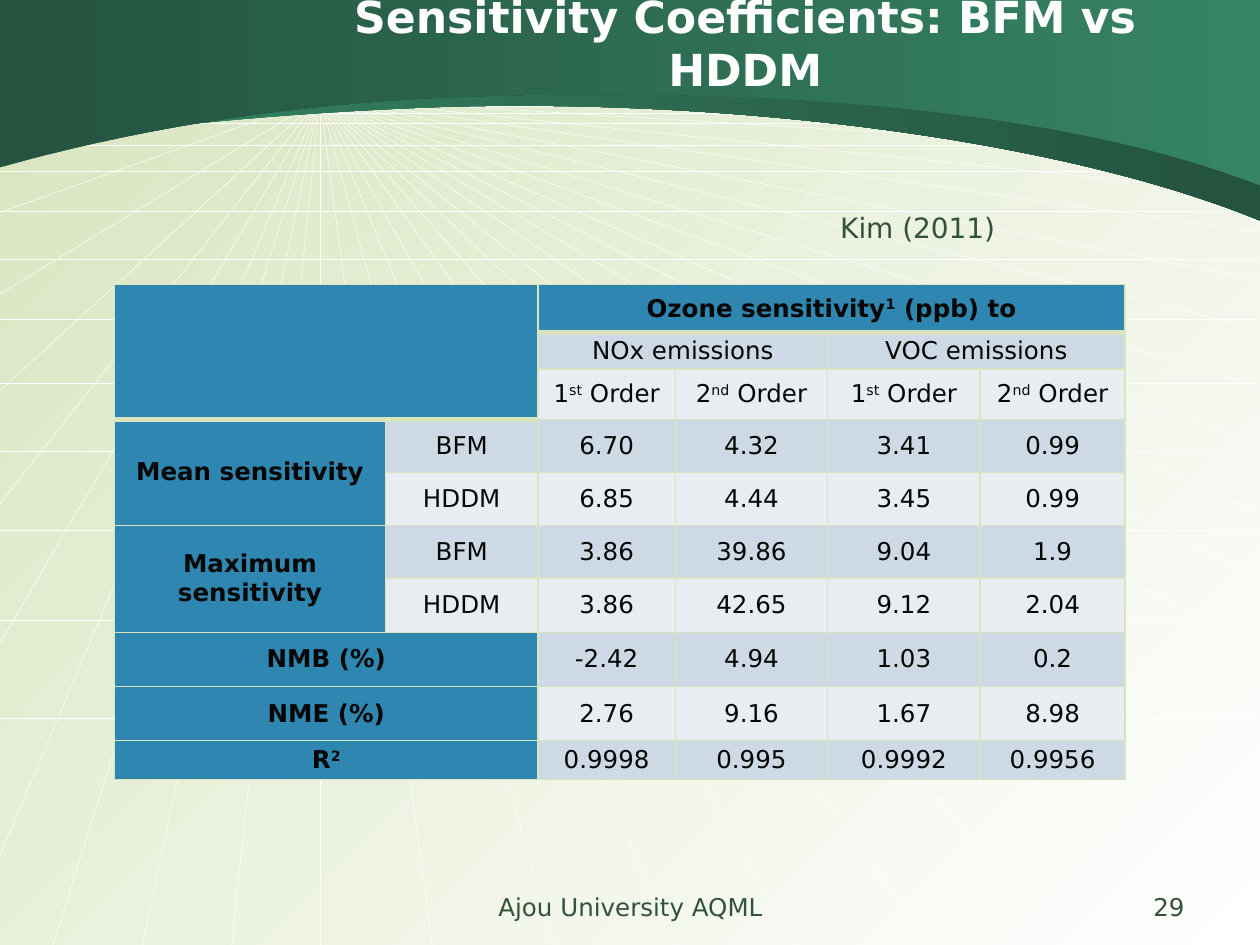
from dataclasses import dataclass

from lxml import etree
from pptx import Presentation
from pptx.dml.color import RGBColor
from pptx.enum.shapes import MSO_CONNECTOR
from pptx.enum.text import MSO_ANCHOR, MSO_AUTO_SIZE, PP_ALIGN
from pptx.oxml.ns import qn
from pptx.util import Inches, Pt

STRAIGHT = MSO_CONNECTOR.STRAIGHT
MIDDLE = MSO_ANCHOR.MIDDLE
LEFT, CENTER, RIGHT = PP_ALIGN.LEFT, PP_ALIGN.CENTER, PP_ALIGN.RIGHT
NO_AUTOFIT = MSO_AUTO_SIZE.NONE


@dataclass(frozen=True)
class Theme:
    font: str = "DejaVu Sans"
    white: str = "FFFFFF"
    pale_green: str = "D7E4BE"
    dark_green: str = "24533F"
    mid_green: str = "368463"
    text_green: str = "335338"
    table_text: str = "040705"
    header: str = "2F86B1"
    bands: tuple = ("E8EDF2", "CDD9E4")
    title_size: float = 25.2
    source_size: float = 16
    body_size: float = 14


theme = Theme()


def write(text_frame, text, size, color, bold=False, align=CENTER):
    """Fill a text frame; parts between ^ signs become superscript."""
    paragraph = text_frame.paragraphs[0]
    paragraph.alignment = align
    for index, part in enumerate(text.split("^")):
        if not part:
            continue
        run = paragraph.add_run()
        run.text = part
        run.font.name = theme.font
        run.font.size = Pt(size)
        run.font.bold = bold
        run.font.color.rgb = RGBColor.from_string(color)
        if index % 2:
            run.font._element.set("baseline", "30000")


def set_gradient(fill, colors, angle):
    fill.gradient()
    fill.gradient_angle = angle
    for stop, color, position in zip(fill.gradient_stops, colors, (0, 1)):
        stop.color.rgb = RGBColor.from_string(color)
        stop.position = position


presentation = Presentation()
presentation.slide_width = Inches(10)
presentation.slide_height = Inches(7.5)
slide = presentation.slides.add_slide(presentation.slide_layouts[5])
shapes = slide.shapes
set_gradient(slide.background.fill, (theme.pale_green, theme.white), 315)

# Perspective grid: rays from one vanishing point, then horizontal lines
vanishing_point = (2.54, 0.78)
left_edge, right_edge, bottom_edge = -0.01, 9.99, 7.5
right_ends = (1, 1.23, 1.54, 1.84, 2.22, 2.61, 3.07, 3.53, 4.06, 4.59, 5.2, 5.89, 6.8)
bottom_ends = (0.42, 1.13, 1.84, 2.54, 3.43, 4.39, 5.34, 6.3, 7.38, 8.46, 9.6)
left_ends = (0.78, 0.97, 1.16, 1.69, 2.34, 3.11, 4.01, 5.12, 6.81)
levels = (0.84, 0.9, 0.98, 1.15, 1.36, 1.68, 2.06, 2.53, 3.04, 3.58, 4.21, 4.92, 5.7)
grid_lines = [(vanishing_point, (right_edge, y)) for y in right_ends]
grid_lines += [(vanishing_point, (x, bottom_edge)) for x in bottom_ends]
grid_lines += [(vanishing_point, (left_edge, y)) for y in left_ends]
grid_lines += [((left_edge, y), (right_edge, y)) for y in levels]
grid = shapes.add_group_shape()
for start, end in grid_lines:
    line = grid.shapes.add_connector(STRAIGHT, *map(Inches, start + end))
    line.line.color.rgb = RGBColor.from_string(theme.white)
    line.line.width = Pt(0.25)
    etree.SubElement(line._element.spPr, qn("a:effectLst"))

# Header bands: the lower edge is two Bezier curves of three points each
header_bands = (
    ([(left_edge, 1.19), (0.11, 1.18), (1.33, 0.93), (3.47, 0.85),
      (5.61, 0.78), (8.31, 1.06), (10, 1.75)], (theme.mid_green, theme.dark_green)),
    ([(left_edge, 1.33), (0.11, 1.31), (1.51, 0.85), (3.64, 0.77),
      (5.77, 0.69), (8.31, 0.81), (10, 1.47)], (theme.dark_green, theme.mid_green)),
)
for edge, colors in header_bands:
    builder = shapes.build_freeform(Inches(left_edge), 0)
    builder.add_line_segments([(Inches(x), Inches(y)) for x, y in edge + [(10, 0)]])
    band = builder.convert_to_shape()
    segments = list(band._element.iter(qn("a:lnTo")))
    for first in (1, 4):
        curve = etree.Element(qn("a:cubicBezTo"))
        segments[first].addprevious(curve)
        for segment in segments[first:first + 3]:
            curve.append(segment[0])
            segment.getparent().remove(segment)
    band.shadow.inherit = False
    band.line.fill.background()
    set_gradient(band.fill, colors, 0)

title = shapes.title
shapes._spTree.append(title._element)  # bring the title in front of the bands
title.left, title.top, title.width, title.height = map(Inches, (2.04, 0.03, 7.75, 0.62))
title.text_frame.auto_size = NO_AUTOFIT
title.text_frame.word_wrap = True
title.text_frame.vertical_anchor = MIDDLE
write(title.text_frame, "Sensitivity Coefficients: BFM vs HDDM",
      theme.title_size, theme.white, bold=True)

labels = (
    ("Kim (2011)", (6.57, 1.62, 1.89, 0.37), theme.source_size, LEFT),
    ("Ajou University AQML", (3.42, 7.03, 3.17, 0.35), theme.body_size, CENTER),
    ("29", (7.17, 7.03, 2.33, 0.35), theme.body_size, RIGHT),
)
for text, box, size, align in labels:
    label = shapes.add_textbox(*map(Inches, box))
    label.text_frame.word_wrap = True
    write(label.text_frame, text, size, theme.text_green, align=align)

# Sensitivity table
table_rows = (
    ("", "", "Ozone sensitivity^1^ (ppb) to", "", "", ""),
    ("", "", "NOx emissions", "", "VOC emissions", ""),
    ("", "") + ("1^st^ Order", "2^nd^ Order") * 2,
    ("Mean sensitivity", "BFM", "6.70", "4.32", "3.41", "0.99"),
    ("", "HDDM", "6.85", "4.44", "3.45", "0.99"),
    ("Maximum sensitivity", "BFM", "3.86", "39.86", "9.04", "1.9"),
    ("", "HDDM", "3.86", "42.65", "9.12", "2.04"),
    ("NMB (%)", "", "-2.42", "4.94", "1.03", "0.2"),
    ("NME (%)", "", "2.76", "9.16", "1.67", "8.98"),
    ("R^2^", "", "0.9998", "0.995", "0.9992", "0.9956"),
)
column_widths = (2.15, 1.21, 1.09, 1.21, 1.21, 1.15)
row_heights = (0.38, 0.29, 0.4, 0.42, 0.42, 0.42, 0.43, 0.43, 0.43, 0.31)
merges = (((0, 0), (2, 1)), ((0, 2), (0, 5)), ((1, 2), (1, 3)), ((1, 4), (1, 5)),
          ((3, 0), (4, 0)), ((5, 0), (6, 0)),
          ((7, 0), (7, 1)), ((8, 0), (8, 1)), ((9, 0), (9, 1)))
table = shapes.add_table(len(table_rows), len(column_widths), Inches(0.91), Inches(2.26),
                         Inches(sum(column_widths)), Inches(sum(row_heights))).table
table.first_row = table.horz_banding = False
for column, width in zip(table.columns, column_widths):
    column.width = Inches(width)
for row, height in zip(table.rows, row_heights):
    row.height = Inches(height)
for first, last in merges:
    table.cell(*first).merge(table.cell(*last))

for row_index, texts in enumerate(table_rows):
    for column_index, text in enumerate(texts):
        cell = table.cell(row_index, column_index)
        cell.vertical_anchor = MIDDLE
        cell.margin_left = cell.margin_right = Inches(0.07)
        cell.margin_top = cell.margin_bottom = 0
        under_corner = column_index < 2
        for side in "LRTB":
            thick = ((side == "B" and row_index == (2 if under_corner else 0))
                     or (side == "T" and row_index == 3 and under_corner))
            border = etree.SubElement(cell._tc.get_or_add_tcPr(), qn(f"a:ln{side}"),
                                      w=str(Pt(3 if thick else 1)))
            border_fill = etree.SubElement(border, qn("a:solidFill"))
            etree.SubElement(border_fill, qn("a:srgbClr"), val=theme.pale_green)
        is_header = row_index == 0 or column_index == 0
        color = theme.header if is_header else theme.bands[row_index % 2]
        cell.fill.solid()
        cell.fill.fore_color.rgb = RGBColor.from_string(color)
        if text:
            write(cell.text_frame, text, theme.body_size, theme.table_text, bold=is_header)

presentation.save("out.pptx")
